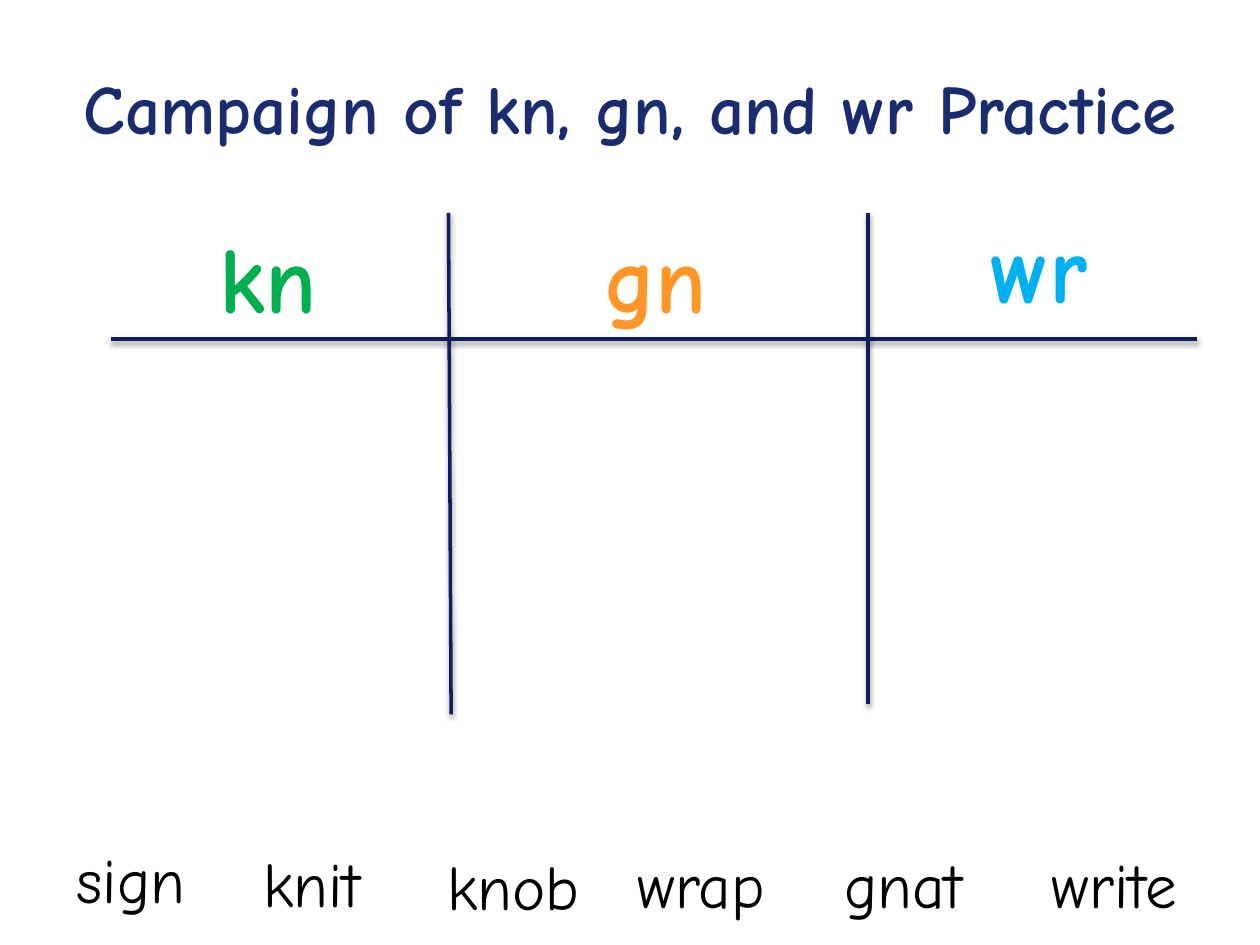
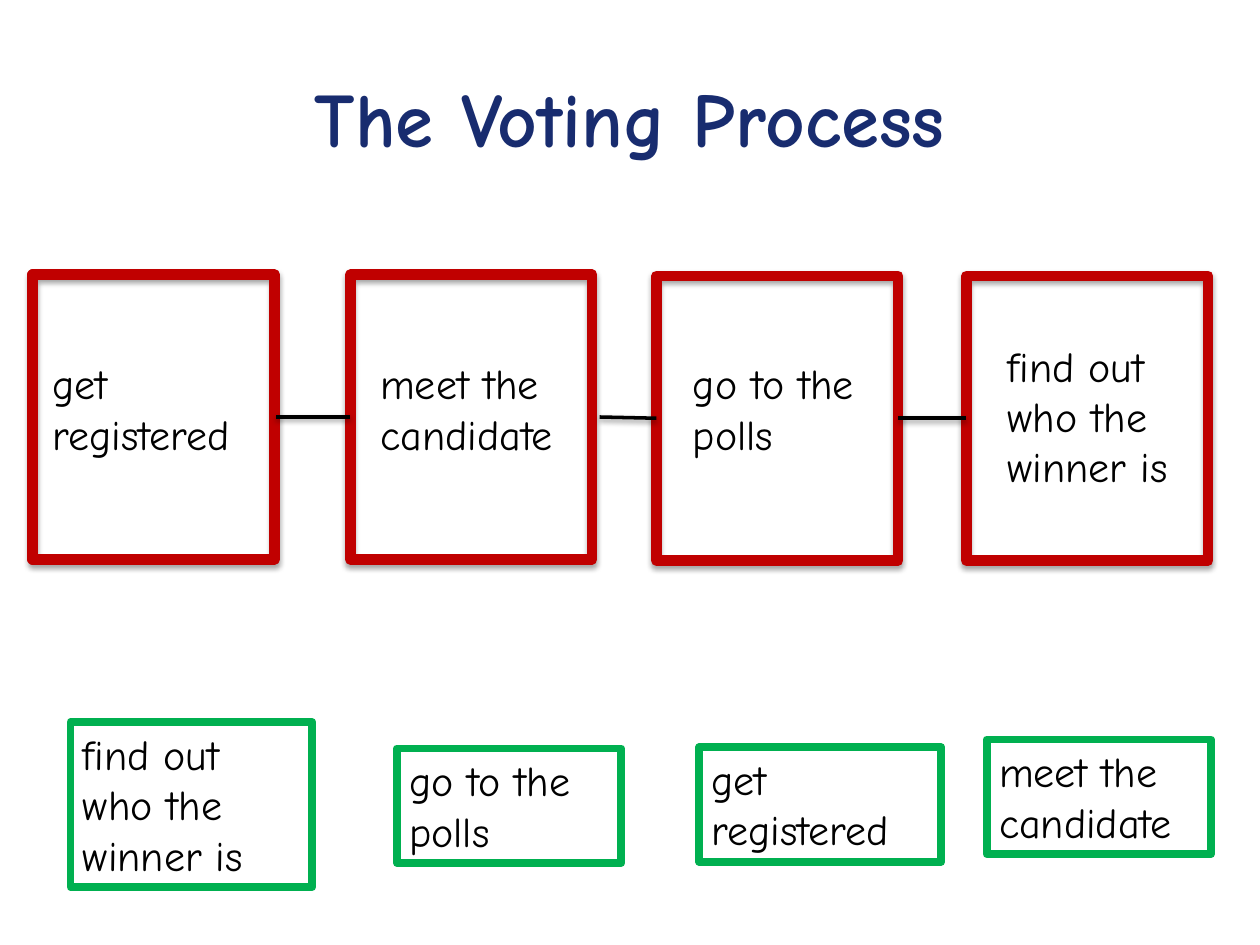
"""Builds a spelling sort slide and a voting process slide."""
from lxml import etree
from pptx import Presentation
from pptx.dml.color import RGBColor as RGB
from pptx.enum.shapes import MSO_CONNECTOR as CONN, MSO_SHAPE as SHAPE
from pptx.enum.text import MSO_ANCHOR as ANCHOR, PP_ALIGN as ALIGN
from pptx.oxml.ns import qn
from pptx.util import Pt

FONT = "Comic Neue"
HUES = {"title": "182C6F", "rule": "111E5C", "ink": "000000", "red": "C00000",
        "green": "00B050", "orange": "FF9627", "sky": "00B0F0"}

SORT = "Campaign of kn, gn, and wr Practice"
RULES = [(63.4, 193.7, 684, 193.7), (256.3, 121.7, 257.8, 408.2),
         (496.1, 121.7, 496.1, 402.5)]
HEADS = [("kn", "green", 85.7, 121.7), ("gn", "orange", 307.4, 121.7),
         ("wr", "sky", 526.3, 115.9)]
WORDS = [("sign", 36.7, 476.6), ("knit", 143.3, 478.8), ("knob", 248.4, 481),
         ("wrap", 357.1, 479.5), ("gnat", 475.2, 479.5), ("write", 594, 479.5)]

VOTE = "The Voting Process"
FRAMES = [(18.7, 157), (200.2, 157), (375.1, 157.7), (552.2, 157.7)]
LINKS = [(157.7, 238.3, 200.2, 238.3), (342.7, 238.3, 375.1, 239),
         (513.4, 239, 552.2, 239)]
STEPS = [("get registered", 23, 200.9, 138.2),
         ("meet the candidate", 210.2, 200.9, 128.2),
         ("go to the polls", 388.8, 200.9, 128.2),
         ("find out who the winner is", 568.8, 190.8, 138.2)]
CARDS = [("find out who the winner is", 40.3, 412.6, 138.2, 94.3),
         ("go to the polls", 226.8, 427.7, 128.2, 65.5),
         ("get registered", 399.6, 427, 138.2, 65.5),
         ("meet the candidate", 563.8, 422.6, 128.2, 65.5)]


def stroke(line, hue, width):
    line.color.rgb = RGB.from_string(HUES[hue])
    line.width = Pt(width)


def shade(shape, alpha, dist):
    fx = etree.SubElement(shape._element.spPr, qn("a:effectLst"))
    cast = etree.SubElement(fx, qn("a:outerShdw"), blurRad=str(Pt(3.1)),
                            dist=str(Pt(dist)), dir="5400000", rotWithShape="0")
    tint = etree.SubElement(cast, qn("a:srgbClr"), val=HUES["ink"])
    etree.SubElement(tint, qn("a:alpha"), val=str(alpha * 1000))


def write(slide, text, x, y, w, h, size=24, hue="ink", bold=False,
          align=ALIGN.LEFT, anchor=ANCHOR.TOP, space=1, edge=None):
    box = slide.shapes.add_textbox(Pt(x), Pt(y), Pt(w), Pt(h))
    if edge:
        stroke(box.line, edge, 4.5)
    frame = box.text_frame
    frame.word_wrap = True
    frame.vertical_anchor = anchor
    para = frame.paragraphs[0]
    para.alignment = align
    para.line_spacing = space
    run = para.add_run()
    run.text = text
    font = run.font
    font.name, font.size, font.bold = FONT, Pt(size), bold
    font.color.rgb = RGB.from_string(HUES[hue])


def title(slide, text, y, size, space=1):
    write(slide, text, 36, y, 648, 90, size=size, hue="title", bold=True,
          align=ALIGN.CENTER, anchor=ANCHOR.MIDDLE, space=space)


def rule(slide, ends, hue):
    line = slide.shapes.add_connector(CONN.STRAIGHT, *map(Pt, ends))
    stroke(line.line, hue, 2)
    shade(line, 38, 1.6)


def frame(slide, x, y):
    box = slide.shapes.add_shape(SHAPE.RECTANGLE, Pt(x), Pt(y), Pt(138.2), Pt(162.7))
    box.fill.background()
    stroke(box.line, "red", 6)
    shade(box, 35, 1.8)


def sort(slide):
    title(slide, SORT, 12.2, 39.6, space=1.15)
    for ends in RULES:
        rule(slide, ends, "rule")
    for text, hue, x, y in HEADS:
        write(slide, text, x, y, 134.6, 72.7, size=54, hue=hue, bold=True,
              align=ALIGN.CENTER)
    for text, x, y in WORDS:
        write(slide, text, x, y, 111.6 if text == "write" else 95, 51.1, size=36)


def vote(slide):
    title(slide, VOTE, 21.6, 44)
    for card in CARDS:
        write(slide, *card, edge="green")
    for spot in FRAMES:
        frame(slide, *spot)
    for ends in LINKS:
        rule(slide, ends, "ink")
    for text, x, y, w in STEPS:
        write(slide, text, x, y, w, 94.3 if "winner" in text else 65.5)


def main():
    deck = Presentation()
    deck.slide_width, deck.slide_height = Pt(720), Pt(540)
    for build in (sort, vote):
        build(deck.slides.add_slide(deck.slide_layouts[6]))
    deck.save("out.pptx")


if __name__ == "__main__":
    main()
